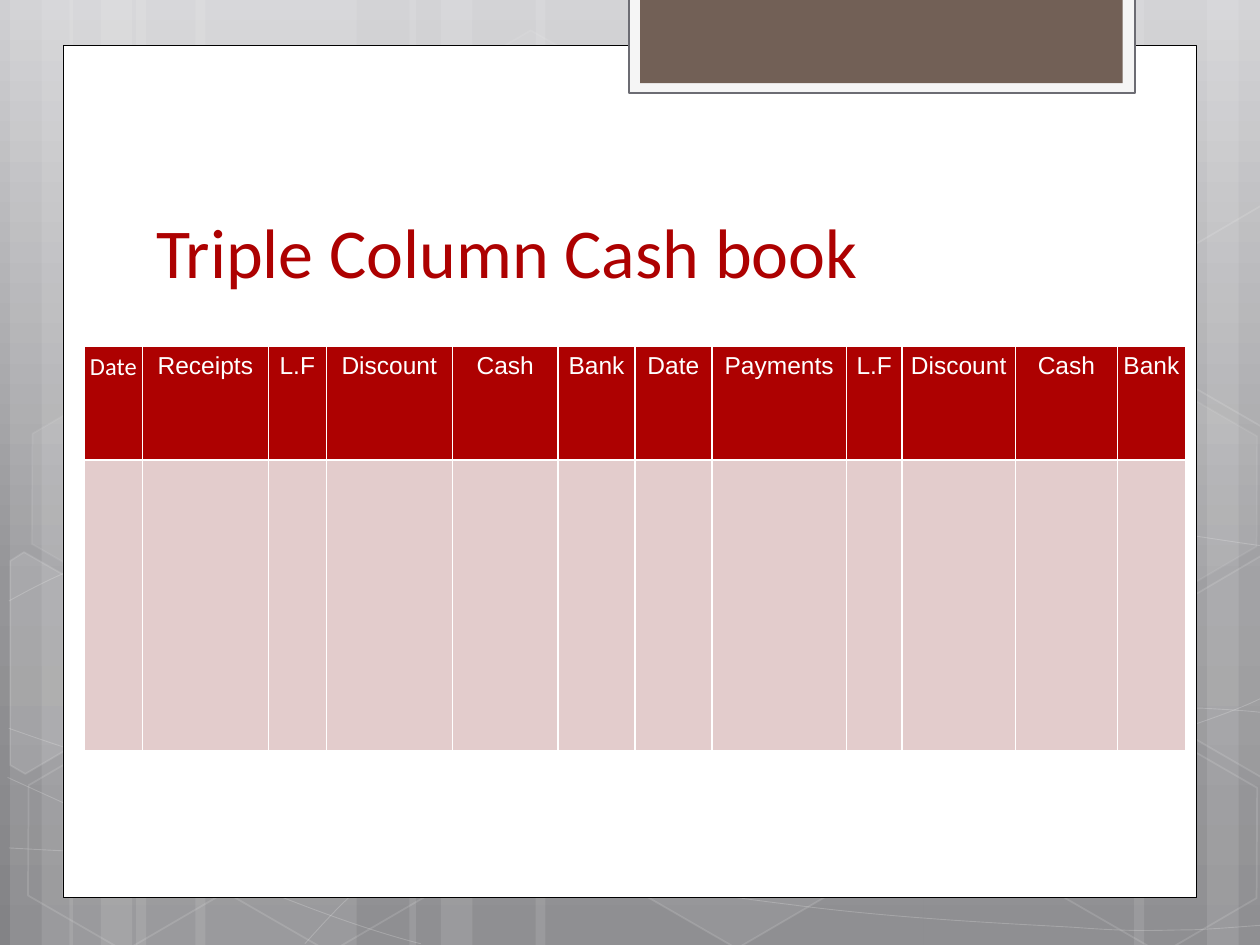
import math

import pptx
import pptx.util
import pptx.dml.color
import pptx.enum.shapes
import pptx.enum.text
import pptx.oxml
import pptx.oxml.ns
from lxml import etree

Inches, Pt = pptx.util.Inches, pptx.util.Pt
SHAPE = pptx.enum.shapes.MSO_SHAPE
qn = pptx.oxml.ns.qn

TITLE = "Triple Column Cash book"
# Column heading and width
COLUMNS = [
    ("Date", 0.46), ("Receipts", 1), ("L.F", 0.46), ("Discount", 1), ("Cash", 0.84), ("Bank", 0.61),
    ("Date", 0.61), ("Payments", 1.07), ("L.F", 0.44), ("Discount", 0.9), ("Cash", 0.81), ("Bank", 0.54),
]
ROW_HEIGHTS = [0.9, 2.31]
ROW_FILLS = ["AD0101", "E3CCCC"]

BACKGROUND = [(0, "CFCFD2"), (62, "959598"), (100, "838386")]
# Left, width and rotation of the full-height stripes
STRIPES = [
    (1.08, 1.75, 0), (0.08, 0.5, 0), (0.33, 0.83, 0), (1.55, 1.75, 0), (0.55, 0.5, 0), (0.8, 0.83, 0),
    (7.33, 1.75, 180), (9.58, 0.5, 180), (9, 0.83, 180), (4.25, 3.08, 0), (3.25, 0.5, 0), (3.5, 0.83, 0),
]
# Each curve: a start point, then three Bezier points per segment
CURVES = [
    [(0.07, 6.73), (0.61, 6.76), (1.15, 6.79), (1.9, 6.78), (2.65, 6.77), (3.58, 6.75), (4.58, 6.65),
     (5.58, 6.55), (7, 6.36), (7.92, 6.17), (8.83, 5.98), (9.77, 5.68), (10.07, 5.51)],
    [(0.07, 4.77), (0.36, 4.61), (0.65, 4.46), (1.21, 4.31), (1.78, 4.16), (2.59, 3.94), (3.47, 3.87),
     (4.36, 3.8), (5.44, 3.79), (6.54, 3.87), (7.64, 3.95), (9.47, 4.26), (10.07, 4.34)],
    [(0.06, 6.17), (1.27, 6.72), (2.47, 7.27), (3.34, 7.49)],
    [(0.07, 5.78), (0.38, 5.89), (0.7, 6), (1.28, 6.16), (1.86, 6.31), (2.73, 6.56), (3.57, 6.73),
     (4.4, 6.9), (5.45, 7.08), (6.28, 7.18), (7.11, 7.29), (8, 7.33), (8.53, 7.36),
     (9.05, 7.4), (9.19, 7.38), (9.45, 7.38), (9.71, 7.37), (9.89, 7.35), (10.07, 7.34)],
    [(2.42, 7.49), (2.6, 7.29), (2.78, 7.09), (3.02, 6.91), (3.26, 6.73), (3.6, 6.53), (3.88, 6.39),
     (4.16, 6.25), (4.33, 6.19), (4.7, 6.09), (5.06, 5.99), (5.73, 5.85), (6.08, 5.78),
     (6.44, 5.71), (6.49, 5.71), (6.8, 5.69), (7.11, 5.66), (7.6, 5.63), (7.94, 5.62),
     (8.29, 5.61), (8.86, 5.62), (8.86, 5.62), (9.08, 5.62), (9.31, 5.62), (9.53, 5.62),
     (9.71, 5.63), (9.88, 5.64), (9.97, 5.65), (10.06, 5.66), (10.03, 5.65), (10.06, 5.66)],
]
TILT = 30
# Left, top, fill opacity (None = no fill), line opacity
HEXAGONS = [
    (3.34, 0.36, 4, 8), (4.97, 5.89, 6, 12), (0.11, 5.91, None, 12), (0.14, 3.12, 7, 8),
    (1.74, 5.92, None, 12), (7.53, 4.53, 10, 12), (8.34, 5.93, None, 12), (8.34, 3.14, 7, 8),
]
# Hexagons cut by the slide edge: centre of rotation, corners as seen, fill opacity
CUT_HEXAGONS = [
    ((0.36, 5.35), [(0.08, 4.45), (0.19, 4.38), (0.96, 4.82), (0.95, 5.7), (0.2, 6.14), (0.08, 6.07)], 10),
    ((9.85, 5.2), [(9.26, 4.85), (10.01, 4.41), (10.09, 4.46), (10.09, 6.13), (10.02, 6.17), (9.26, 5.73)], 4),
    ((9.85, 2.41), [(9.26, 2.07), (10.01, 1.63), (10.1, 1.68), (10.09, 3.35), (10.02, 3.39), (9.26, 2.95)], None),
]
# Left, top, width, height, fill, line colour, line width
PANELS = [
    (0.5, 0.36, 9, 6.76, "FFFFFF", "000000", 0.5),
    (4.99, -0.02, 4.02, 0.76, "F5F5F5", "6C6C73", 1.25),
    (5.08, -0.02, 3.83, 0.68, "726056", None, 0),
]


def paint(fill, color, opacity=100):
    if color is None or opacity is None:
        fill.background()
        return
    fill.solid()
    fill.fore_color.rgb = pptx.dml.color.RGBColor.from_string(color)
    if opacity < 100:
        rgb = fill._xPr.find(qn("a:solidFill"))[0]
        etree.SubElement(rgb, qn("a:alpha"), val=str(opacity * 1000))


def style(shape, fill, fill_opacity, line, line_width, line_opacity=100):
    shape.shadow.inherit = False
    paint(shape.fill, fill, fill_opacity)
    paint(shape.line.fill, line, line_opacity)
    if line:
        shape.line.width = Pt(line_width)


def add_box(kind, left, top, width, height):
    return slide.shapes.add_shape(kind, Inches(left), Inches(top), Inches(width), Inches(height))


def add_outline(points, close):
    corners = [(Inches(x), Inches(y)) for x, y in points]
    builder = slide.shapes.build_freeform(*corners[0])
    builder.add_line_segments(corners[1:], close=close)
    return builder.convert_to_shape()


def add_curve(points):
    """Draw the control points as an outline, then join each three into a Bezier segment."""
    shape = add_outline(points, False)
    outline = next(shape._element.iter(qn("a:path")))
    segments = outline.findall(qn("a:lnTo"))
    for start in range(0, len(segments), 3):
        bezier = etree.SubElement(outline, qn("a:cubicBezTo"))
        for segment in segments[start:start + 3]:
            bezier.append(segment[0])
            outline.remove(segment)
    return shape


def turn_back(point, centre):
    angle = math.radians(TILT)
    x, y = point[0] - centre[0], point[1] - centre[1]
    return (centre[0] + x * math.cos(angle) + y * math.sin(angle),
            centre[1] - x * math.sin(angle) + y * math.cos(angle))


def set_borders(cell, color, width):
    props = cell._tc.get_or_add_tcPr()
    for index, side in enumerate(("lnL", "lnR", "lnT", "lnB")):
        border = etree.Element(qn("a:" + side), w=str(Pt(width)))
        solid = etree.SubElement(border, qn("a:solidFill"))
        etree.SubElement(solid, qn("a:srgbClr"), val=color)
        props.insert(index, border)


prs = pptx.Presentation()
prs.slide_width, prs.slide_height = Inches(10), Inches(7.5)
slide = prs.slides.add_slide(prs.slide_layouts[6])

# Background gradient, top to bottom
slide.background.fill.gradient()
gradient = slide.background.fill._xPr.find(qn("a:gradFill"))
for part in list(gradient):
    gradient.remove(part)
stops = etree.SubElement(gradient, qn("a:gsLst"))
for position, color in BACKGROUND:
    stop = etree.SubElement(stops, qn("a:gs"), pos=str(position * 1000))
    etree.SubElement(stop, qn("a:srgbClr"), val=color)
etree.SubElement(gradient, qn("a:lin"), ang="5400000", scaled="0")

# Stripes, curves and hexagons
for left, width, rotation in STRIPES:
    stripe = add_box(SHAPE.RECTANGLE, left, 0, width, 7.5)
    stripe.rotation = rotation
    style(stripe, "FFFFFF", 10, None, 0)
for curve in CURVES:
    style(add_curve(curve), None, None, "FFFFFF", 0.5, 20)
for left, top, fill_opacity, line_opacity in HEXAGONS:
    hexagon = add_box(SHAPE.HEXAGON, left, top, 1.75, 1.52)
    hexagon.adjustments[0] = 0.285
    hexagon.rotation = TILT
    style(hexagon, "FFFFFF", fill_opacity, "FFFFFF", 1, line_opacity)
for centre, corners, fill_opacity in CUT_HEXAGONS:
    cut_hexagon = add_outline([turn_back(corner, centre) for corner in corners], True)
    cut_hexagon.rotation = TILT
    style(cut_hexagon, "FFFFFF", fill_opacity, "FFFFFF", 1, 12)

# White page and top tab
for left, top, width, height, fill, line, line_width in PANELS:
    style(add_box(SHAPE.RECTANGLE, left, top, width, height), fill, 100, line, line_width)

# Title
title = slide.shapes.add_textbox(Inches(1.14), Inches(1.12), Inches(7.68), Inches(1.25)).text_frame
title.word_wrap = True
title.vertical_anchor = pptx.enum.text.MSO_ANCHOR.BOTTOM
heading = title.paragraphs[0]
heading.text = TITLE
heading.font.name, heading.font.size = "Calibri", Pt(40)
paint(heading.font.fill, "AD0101")

# Cash book table
cash_book = slide.shapes.add_table(
    len(ROW_HEIGHTS), len(COLUMNS), Inches(0.67), Inches(2.75),
    Inches(sum(width for _, width in COLUMNS)), Inches(sum(ROW_HEIGHTS))).table
for row, height in zip(cash_book.rows, ROW_HEIGHTS):
    row.height = Inches(height)
for col, (label, width) in enumerate(COLUMNS):
    cash_book.columns[col].width = Inches(width)
    for row, fill in enumerate(ROW_FILLS):
        cell = cash_book.cell(row, col)
        paint(cell.fill, fill)
        set_borders(cell, "FFFFFF", 1)
    header = cash_book.cell(0, col)
    header.margin_left = header.margin_right = header.margin_top = header.margin_bottom = Inches(0.01)
    entry = header.text_frame.paragraphs[0]
    entry.text = label
    entry.alignment = pptx.enum.text.PP_ALIGN.CENTER
    entry.line_spacing = 1.15
    entry.font.name = "Calibri" if col == 0 else "Arial"
    entry.font.size, entry.font.bold = Pt(14), False
    paint(entry.font.fill, "FFFFFF")

prs.save("out.pptx")
